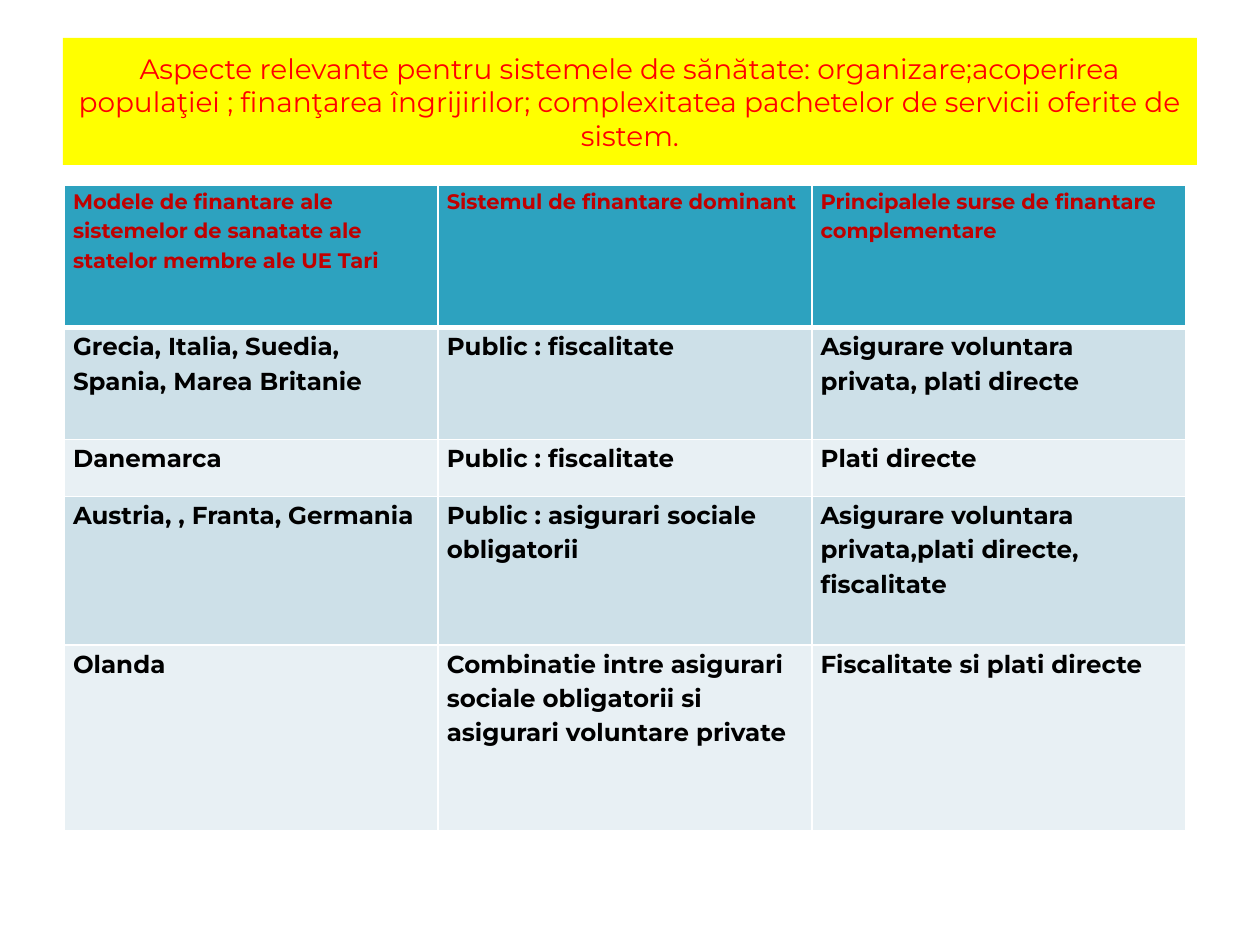
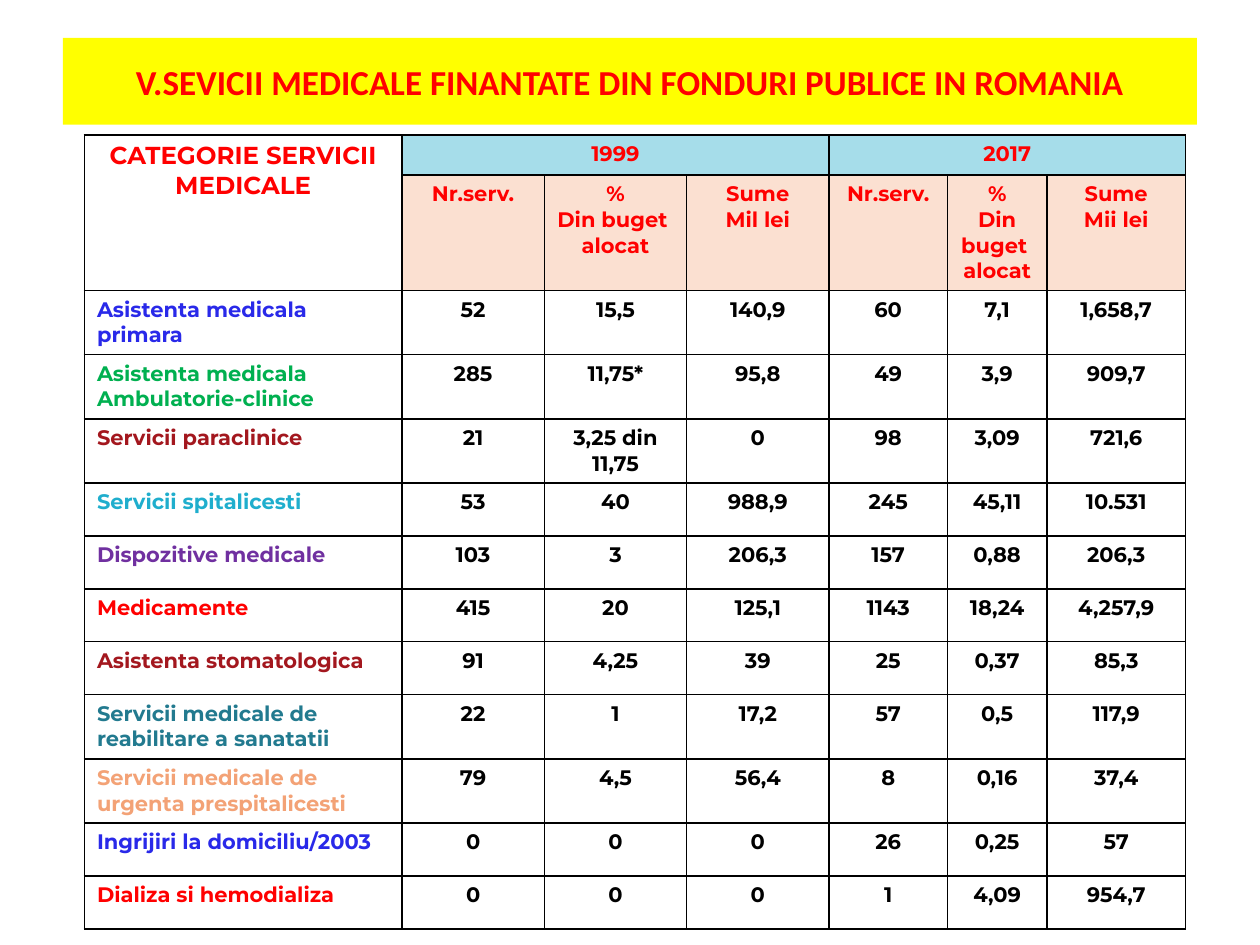
from lxml.etree import SubElement
from pptx import Presentation
from pptx.dml.color import RGBColor
from pptx.enum.shapes import MSO_SHAPE
from pptx.enum.text import MSO_ANCHOR, PP_ALIGN
from pptx.oxml.ns import qn
from pptx.util import Inches, Pt

RED, BLACK, WHITE, YELLOW = "FF0000", "000000", "FFFFFF", "FFFF00"
BODY_FONT = "Montserrat"
BAND_LEFT, BAND_TOP, BAND_WIDTH = 0.5, 0.3, 9

MODELS = [
    ["Modele de finantare ale sistemelor de sanatate ale statelor membre ale UE Tari",
     "Sistemul de finantare dominant", "Principalele surse de finantare complementare"],
    ["Grecia, Italia, Suedia, Spania, Marea Britanie", "Public : fiscalitate",
     "Asigurare voluntara privata, plati directe"],
    ["Danemarca", "Public : fiscalitate", "Plati directe"],
    ["Austria, , Franta, Germania", "Public : asigurari sociale obligatorii",
     "Asigurare voluntara privata,plati directe, fiscalitate"],
    ["Olanda", "Combinatie intre asigurari sociale obligatorii si asigurari voluntare private",
     "Fiscalitate si plati directe"],
]
MODEL_HEIGHTS = [1.13, 0.89, 0.45, 1.18, 1.47]

SHARE = "%\nDin buget \nalocat"
MEASURES = ["Nr.serv.", SHARE, "Sume\nMil lei", "Nr.serv.", SHARE, "Sume\nMii lei"]
SERVICES = [
    ("Asistenta medicala primara", "2929E9", ["52", "15,5", "140,9", "60", "7,1", "1,658,7"]),
    ("Asistenta medicala\nAmbulatorie-clinice", "00B050",
     ["285", "11,75*", "95,8", "49", "3,9", "909,7"]),
    ("Servicii paraclinice", "A3171E", ["21", "3,25 din\n11,75", "0", "98", "3,09", "721,6"]),
    ("Servicii spitalicesti", "1FAECD", ["53", "40", "988,9", "245", "45,11", "10.531"]),
    ("Dispozitive medicale", "7030A0", ["103", "3", "206,3", "157", "0,88", "206,3"]),
    ("Medicamente", RED, ["415", "20", "125,1", "1143", "18,24", "4,257,9"]),
    ("Asistenta stomatologica", "A3171E", ["91", "4,25", "39", "25", "0,37", "85,3"]),
    ("Servicii medicale de reabilitare a sanatatii", "227A8F",
     ["22", "1", "17,2", "57", "0,5", "117,9"]),
    ("Servicii medicale de urgenta prespitalicesti", "F3A276",
     ["79", "4,5", "56,4", "8", "0,16", "37,4"]),
    ("Ingrijiri la domiciliu/2003", "2929E9", ["0", "0", "0", "26", "0,25", "57"]),
    ("Dializa si hemodializa", RED, ["0", "0", "0", "1", "4,09", "954,7"]),
]
SERVICE_WIDTHS = [2.52, 1.13, 1.13, 1.13, 0.94, 0.79, 1.1]
SERVICE_HEIGHTS = [0.32, 0.91] + [0.51] * 3 + [0.42] * 4 + [0.51] * 2 + [0.42] * 2


def color(hex_code):
    return RGBColor.from_string(hex_code)


def write_text(frame, text, size=12, ink=BLACK, bold=True, font=BODY_FONT,
               align=PP_ALIGN.CENTER, spacing=None):
    frame.word_wrap = True
    for index, line in enumerate(text.split("\n")):
        paragraph = frame.add_paragraph() if index else frame.paragraphs[0]
        paragraph.alignment = align
        if spacing:
            paragraph.line_spacing = spacing
        run = paragraph.add_run()
        run.text = line
        run.font.size = Pt(size)
        run.font.bold = bold
        run.font.name = font
        run.font.color.rgb = color(ink)


def fill_cell(cell, hex_code):
    cell.fill.solid()
    cell.fill.fore_color.rgb = color(hex_code)


def draw_borders(cell, hex_code, **widths):
    properties = cell._tc.get_or_add_tcPr()
    for side in "LRTB":
        border = SubElement(properties, qn(f"a:ln{side}"), w=str(Pt(widths.get(side, 1))))
        SubElement(SubElement(border, qn("a:solidFill")), qn("a:srgbClr"), val=hex_code)


def add_title_band(slide, height, text, **text_format):
    band = slide.shapes.add_shape(MSO_SHAPE.RECTANGLE, Inches(BAND_LEFT), Inches(BAND_TOP),
                                  Inches(BAND_WIDTH), Inches(height))
    band.shadow.inherit = False
    band.fill.solid()
    band.fill.fore_color.rgb = color(YELLOW)
    band.line.fill.background()
    band.text_frame.vertical_anchor = MSO_ANCHOR.MIDDLE
    write_text(band.text_frame, text, ink=RED, **text_format)


def add_grid(slide, left, top, widths, heights):
    grid = slide.shapes.add_table(len(heights), len(widths), Inches(left), Inches(top),
                                  Inches(sum(widths)), Inches(sum(heights))).table
    grid.first_row = grid.horz_banding = False
    for column, width in zip(grid.columns, widths):
        column.width = Inches(width)
    for row, height in zip(grid.rows, heights):
        row.height = Inches(height)
    return grid


def add_models_table(slide, left, top, width):
    grid = add_grid(slide, left, top, [width / 3] * 3, MODEL_HEIGHTS)
    for r, row in enumerate(MODELS):
        header = r == 0
        fill = "2DA2BF" if header else ("E8F0F4", "CDE0E8")[r % 2]
        for c, text in enumerate(row):
            cell = grid.cell(r, c)
            cell.margin_left = cell.margin_right = Inches(0.07)
            cell.margin_top = cell.margin_bottom = 0
            draw_borders(cell, WHITE, B=3 if header else 1, T=3 if r == 1 else 1)
            fill_cell(cell, fill)
            write_text(cell.text_frame, text, size=12 if header else 14,
                       ink="C00000" if header else BLACK, align=PP_ALIGN.LEFT, spacing=1.15)


def add_services_table(slide, left, top):
    grid = add_grid(slide, left, top, SERVICE_WIDTHS, SERVICE_HEIGHTS)
    for cell in grid.iter_cells():
        draw_borders(cell, BLACK)
        cell.fill.background()

    category = grid.cell(0, 0)
    category.merge(grid.cell(1, 0))
    write_text(category.text_frame, "CATEGORIE SERVICII MEDICALE", size=14, ink=RED)
    for year, first in (("1999", 1), ("2017", 4)):
        year_cell = grid.cell(0, first)
        year_cell.merge(grid.cell(0, first + 2))
        fill_cell(year_cell, "A6DDEA")
        write_text(year_cell.text_frame, year, ink=RED)
    for c, measure in enumerate(MEASURES, 1):
        fill_cell(grid.cell(1, c), "FBE0D1")
        write_text(grid.cell(1, c).text_frame, measure, ink=RED)

    for r, (service, ink, values) in enumerate(SERVICES, 2):
        write_text(grid.cell(r, 0).text_frame, service, ink=ink, align=PP_ALIGN.LEFT)
        for c, value in enumerate(values, 1):
            write_text(grid.cell(r, c).text_frame, value)


def main():
    deck = Presentation()
    deck.slide_width, deck.slide_height = Inches(10), Inches(7.5)
    blank = deck.slide_layouts[6]

    models = deck.slides.add_slide(blank)
    add_title_band(models, 1.01,
                   "Aspecte relevante pentru sistemele de sănătate: organizare;acoperirea "
                   "populaţiei ; finanţarea îngrijirilor; complexitatea pachetelor de servicii "
                   "oferite de sistem.", size=16, bold=False)
    add_models_table(models, 0.51, 1.47, 8.9)

    services = deck.slides.add_slide(blank)
    add_title_band(services, 0.69, "V.SEVICII MEDICALE FINANTATE DIN FONDURI PUBLICE IN ROMANIA",
                   size=20, font="Calibri")
    add_services_table(services, 0.67, 1.07)

    deck.save("out.pptx")


if __name__ == "__main__":
    main()
